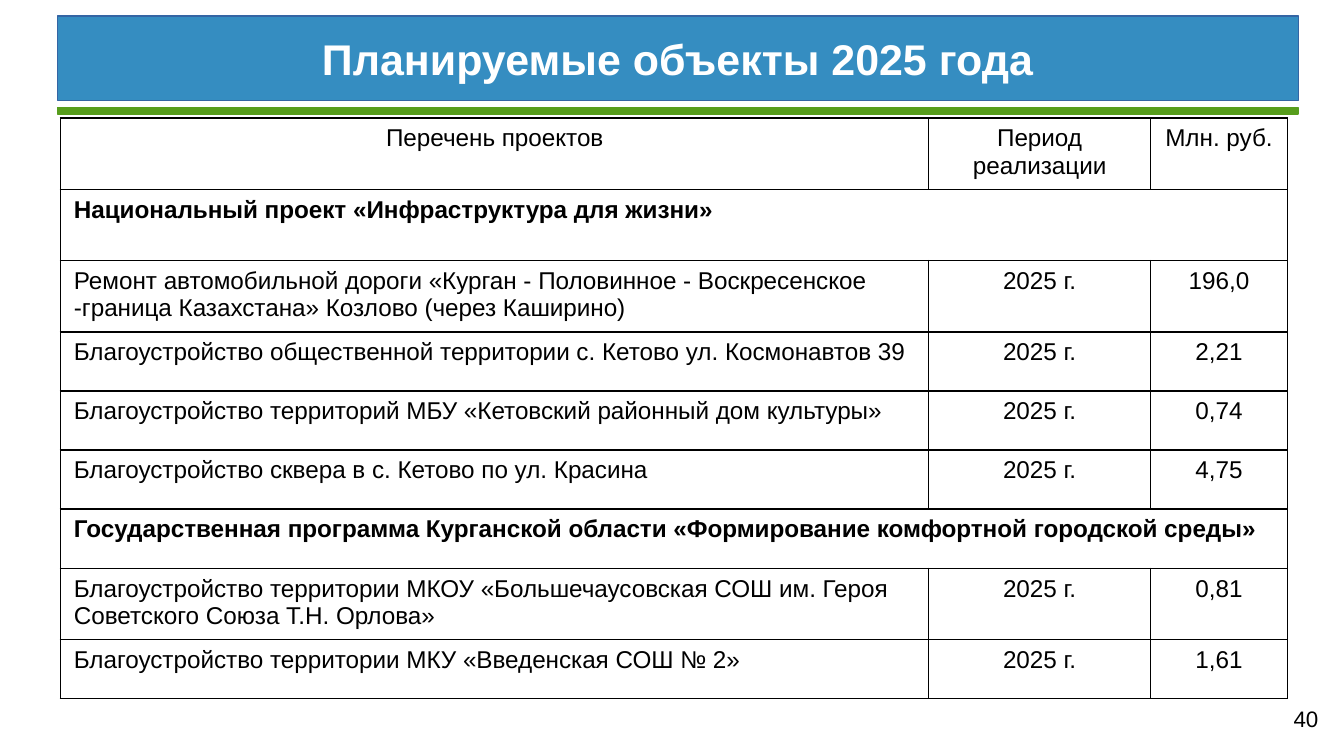
from lxml import etree
from pptx import Presentation
from pptx.dml.color import RGBColor
from pptx.enum.shapes import MSO_SHAPE
from pptx.enum.text import MSO_ANCHOR, MSO_AUTO_SIZE, PP_ALIGN
from pptx.oxml.ns import qn
from pptx.util import Inches, Pt

RECTANGLE = MSO_SHAPE.RECTANGLE
MIDDLE, TOP = MSO_ANCHOR.MIDDLE, MSO_ANCHOR.TOP
NO_FIT = MSO_AUTO_SIZE.NONE
LEFT, CENTER, RIGHT = PP_ALIGN.LEFT, PP_ALIGN.CENTER, PP_ALIGN.RIGHT

TITLE = "Планируемые объекты 2025 года"
PAGE_NUMBER = "40"
HEADINGS = ("Перечень проектов", "Период реализации", "Млн. руб.")
PERIOD = "2025 г."
PROGRAMS = [
    ("Национальный проект «Инфраструктура для жизни»", "tall", [
        ("Ремонт автомобильной дороги «Курган - Половинное - Воскресенское "
         "-граница Казахстана» Козлово (через Каширино)", "196,0", "tall"),
        ("Благоустройство общественной территории с. Кетово ул. Космонавтов 39", "2,21", "short"),
        ("Благоустройство территорий МБУ «Кетовский районный дом культуры»", "0,74", "short"),
        ("Благоустройство сквера в с. Кетово по ул. Красина", "4,75", "short"),
    ]),
    ("Государственная программа Курганской области «Формирование комфортной городской среды»", "short", [
        ("Благоустройство территории МКОУ «Большечаусовская СОШ им. Героя "
         "Советского Союза Т.Н. Орлова»", "0,81", "tall"),
        ("Благоустройство территории МКУ «Введенская СОШ № 2»", "1,61", "short"),
    ]),
]

SLIDE_WIDTH = 10
SLIDE_HEIGHT = SLIDE_WIDTH * 9 / 16
BANNER = (0.43, 0.12, 9.23, 0.63)
STRIPE = (0.43, 0.8, 9.23, 0.05)
NUMBER_BOX = (9.34, 5.2, 0.55, 0.29)
TABLE_CORNER = (0.45, 0.88)
COLUMN_WIDTHS = (6.46, 1.65, 1.02)
ROW_HEIGHTS = {"tall": 0.53, "short": 0.44}
BLACK, WHITE = "000000", "FFFFFF"
BLUE, BLUE_EDGE, GREEN = "358DC1", "3465A4", "579D1C"


def color(value):
    return RGBColor.from_string(value)


def place(shape, area):
    shape.left, shape.top, shape.width, shape.height = map(Inches, area)


def paint(shape, fill, line):
    shape.fill.solid()
    shape.fill.fore_color.rgb = color(fill)
    shape.line.color.rgb = color(line)
    shape.line.width = Pt(0.75)


def write(frame, text, size, align, ink=BLACK, bold=False):
    para = frame.paragraphs[0]
    para.alignment = align
    span = para.add_run()
    span.text = text
    span.font.name = "Arial"
    span.font.size = Pt(size)
    span.font.bold = bold
    span.font.color.rgb = color(ink)


def set_frame(frame, anchor, margins):
    frame.word_wrap = True
    frame.auto_size = NO_FIT
    frame.vertical_anchor = anchor
    (frame.margin_left, frame.margin_top,
     frame.margin_right, frame.margin_bottom) = map(Inches, margins)


def style_cell(cell):
    properties = cell._tc.get_or_add_tcPr()
    for side in ("a:lnL", "a:lnR", "a:lnT", "a:lnB"):
        border = etree.SubElement(properties, qn(side), w=str(Pt(0.96)))
        fill = etree.SubElement(border, qn("a:solidFill"))
        etree.SubElement(fill, qn("a:srgbClr"), val=BLACK)
    cell.fill.solid()
    cell.fill.fore_color.rgb = color(WHITE)


def table_rows():
    yield HEADINGS, "tall", CENTER, False
    for program, height, projects in PROGRAMS:
        yield (program,), height, LEFT, True
        for project, amount, project_height in projects:
            yield (project, PERIOD, amount), project_height, LEFT, False


def add_projects(page):
    rows = list(table_rows())
    heights = [ROW_HEIGHTS[row[1]] for row in rows]
    area = (*TABLE_CORNER, sum(COLUMN_WIDTHS), sum(heights))
    table = page.shapes.add_table(len(rows), len(COLUMN_WIDTHS), *map(Inches, area)).table
    for column, width in zip(table.columns, COLUMN_WIDTHS):
        column.width = Inches(width)
    for index, (texts, _, first_align, bold) in enumerate(rows):
        table.rows[index].height = Inches(heights[index])
        for cell in table.rows[index].cells:
            style_cell(cell)
        if len(texts) == 1:
            table.cell(index, 0).merge(table.cell(index, len(COLUMN_WIDTHS) - 1))
        for column, text in enumerate(texts):
            align = CENTER if column else first_align
            write(table.cell(index, column).text_frame, text, 13, align, bold=bold)


def main():
    deck = Presentation()
    deck.slide_width = Inches(SLIDE_WIDTH)
    deck.slide_height = Inches(SLIDE_HEIGHT)
    page = deck.slides.add_slide(deck.slide_layouts[5])

    title = page.shapes.title
    place(title, BANNER)
    paint(title, BLUE, BLUE_EDGE)
    set_frame(title.text_frame, MIDDLE, (0.07, 0.04, 0.07, 0.04))
    write(title.text_frame, TITLE, 23, CENTER, WHITE, True)

    number = page.shapes.add_textbox(*map(Inches, NUMBER_BOX))
    set_frame(number.text_frame, TOP, (0.08, 0.05, 0.08, 0.04))
    write(number.text_frame, PAGE_NUMBER, 12, RIGHT)

    stripe = page.shapes.add_shape(RECTANGLE, *map(Inches, STRIPE))
    stripe.shadow.inherit = False
    paint(stripe, GREEN, GREEN)

    add_projects(page)
    deck.save("out.pptx")


if __name__ == "__main__":
    main()
